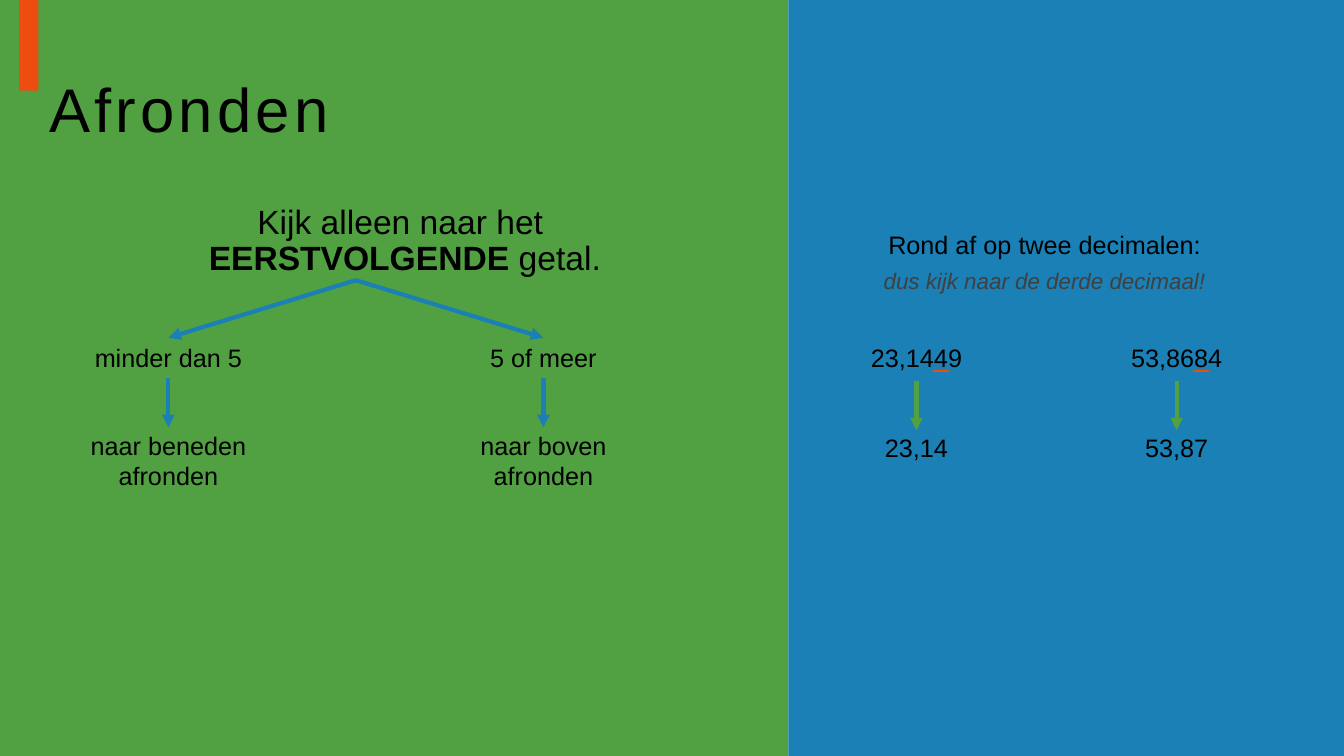
import pptx
import pptx.dml.color
import pptx.enum.shapes
import pptx.enum.text
import pptx.util
from pptx.util import Inches
import lxml.etree

GREEN, BLUE, ORANGE = "51A041", "1A80B6", "ED4D0F"
BLACK, GRAY = "000000", "404040"

panels = [
    (0, 0, 7.82, 7.5, GREEN),
    (7.82, 0, 5.51, 7.5, BLUE),
    (0.19, 0, 0.19, 0.9, ORANGE),
]
title = "Afronden"
rule = ["Kijk alleen naar het \v", "EERSTVOLGENDE", " getal."]
task = "Rond af op twee decimalen:"
hint = "dus kijk naar de derde decimaal!"

rule_steps = [
    (1.67, "minder dan 5", "naar beneden\vafronden"),
    (5.39, "5 of meer", "naar boven\vafronden"),
]
example_steps = [(9.09, "23,1449", "23,14"), (11.67, "53,8684", "53,87")]
fork = (3.53, 2.78)
task_center = 10.36
step_top, result_top = 3.35, 4.22
arrow_length = 0.49
digit_left, digit_width, digit_y = 0.16, 0.16, 3.68

deck = pptx.Presentation()
deck.slide_width, deck.slide_height = Inches(13.33), Inches(7.5)
slide = deck.slides.add_slide(deck.slide_layouts[6])


def color(hex_code):
    return pptx.dml.color.RGBColor.from_string(hex_code)


def add_panel(left, top, width, height, fill):
    panel = slide.shapes.add_shape(
        pptx.enum.shapes.MSO_SHAPE.RECTANGLE,
        Inches(left), Inches(top), Inches(width), Inches(height))
    panel.shadow.inherit = False
    panel.fill.solid()
    panel.fill.fore_color.rgb = color(fill)
    panel.line.fill.background()


def add_text(left, top, width, height, pieces, size, ink=BLACK, wrap=True, centered=True):
    frame = slide.shapes.add_textbox(
        Inches(left), Inches(top), Inches(width), Inches(height)).text_frame
    frame.word_wrap = wrap
    paragraph = frame.paragraphs[0]
    paragraph.text = pieces[0]
    for piece in pieces[1:]:
        paragraph.add_run().text = piece
    if centered:
        paragraph.alignment = pptx.enum.text.PP_ALIGN.CENTER
    for run in paragraph.runs:
        run.font.name = "Arial"
        run.font.size = pptx.util.Pt(size)
        run.font.color.rgb = color(ink)
    return frame


def add_label(center, top, width, text, size=18, ink=BLACK):
    height = 0.71 if "\v" in text else 0.4
    return add_text(center - width / 2, top, width, height, [text], size, ink, wrap=False)


def add_line(start, end, ink, weight=3, arrow=True):
    line = slide.shapes.add_connector(
        pptx.enum.shapes.MSO_CONNECTOR.STRAIGHT,
        *[Inches(value) for value in (*start, *end)])
    line.line.color.rgb = color(ink)
    line.line.width = pptx.util.Pt(weight)
    namespace = "{http://schemas.openxmlformats.org/drawingml/2006/main}"
    if arrow:
        outline = line.line._get_or_add_ln()
        lxml.etree.SubElement(outline, namespace + "tailEnd", type="triangle")
    lxml.etree.SubElement(line._element.spPr, namespace + "effectLst")


def add_step(center, text, result, arrow_top, ink, width, result_y):
    add_label(center, step_top, width, text)
    add_line((center, arrow_top), (center, arrow_top + arrow_length), ink)
    add_label(center, result_y, width, result)


for panel in panels:
    add_panel(*panel)

heading = add_text(0.39, 0.39, 12.61, 1.45, [title], 44, centered=False)
heading.vertical_anchor = pptx.enum.text.MSO_ANCHOR.MIDDLE
heading.paragraphs[0].line_spacing = 0.9
heading.paragraphs[0].runs[0]._r.get_or_add_rPr().set("spc", "300")

rule_text = add_text(0.39, 1.99, 7.25, 0.88, rule, 24).paragraphs[0]
rule_text.line_spacing = 0.9
rule_text.space_before = pptx.util.Pt(10)
rule_text.runs[1].font.bold = True

for center, condition, action in rule_steps:
    add_line(fork, (center, step_top), BLUE)
    add_step(center, condition, action, 3.75, BLUE, 1.76, result_top)

add_label(task_center, 2.23, 3.33, task)
hint_text = add_label(task_center, 2.6, 3.43, hint, 16, GRAY)
hint_text.paragraphs[0].runs[0].font.italic = True

for center, number, rounded in example_steps:
    add_step(center, number, rounded, 3.78, GREEN, 1.11, result_top + 0.02)
    digit_start = center + digit_left
    add_line((digit_start, digit_y), (digit_start + digit_width, digit_y),
             ORANGE, 1.5, arrow=False)

deck.save("out.pptx")
